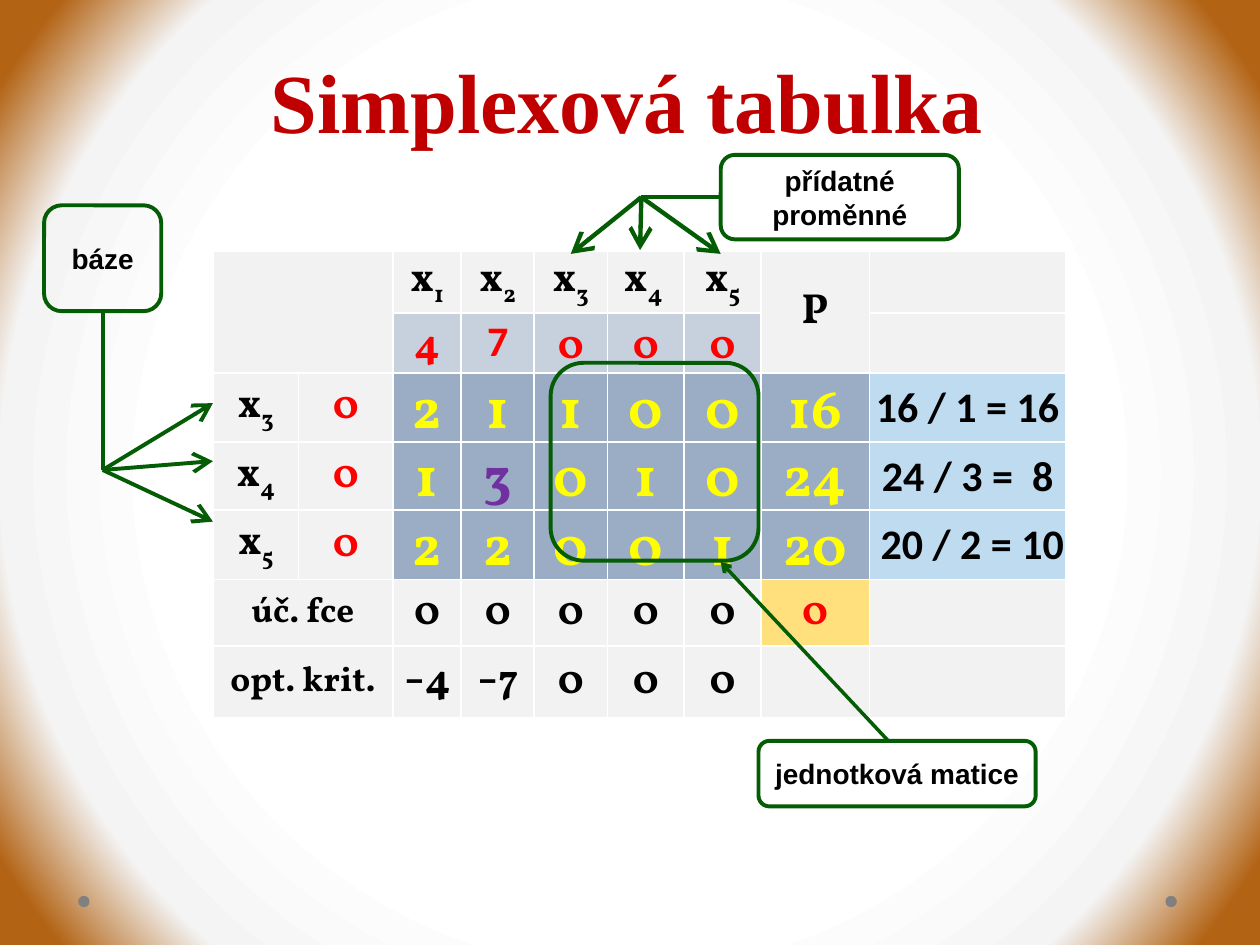
from itertools import groupby

from lxml import etree
from pptx import Presentation
from pptx.dml.color import RGBColor
from pptx.enum.shapes import MSO_CONNECTOR as CONN, MSO_SHAPE as SHAPE
from pptx.enum.text import MSO_ANCHOR as ANCHOR, PP_ALIGN as ALIGN
from pptx.oxml import parse_xml
from pptx.oxml.ns import nsdecls, qn
from pptx.util import Inches, Pt

BLACK = RGBColor(0x00, 0x00, 0x00)
RED = RGBColor(0xFF, 0x00, 0x00)
DARK_RED = RGBColor(0xC0, 0x00, 0x00)
YELLOW = RGBColor(0xFF, 0xFF, 0x00)
PURPLE = RGBColor(0x70, 0x30, 0xA0)
GREEN = RGBColor(0x04, 0x5C, 0x04)
GRAY = RGBColor(0x80, 0x80, 0x80)
PALE = RGBColor(0xF2, 0xF2, 0xF2)
PRICE = RGBColor(0xC7, 0xD1, 0xDE)
MATRIX = RGBColor(0x9B, 0xAD, 0xC4)
RATIO = RGBColor(0x00, 0x70, 0xC0)
GOLD = RGBColor(0xFF, 0xE0, 0x7D)

COLS = [0.68, 0.75, 0.54, 0.58, 0.58, 0.61, 0.61, 0.86, 1.56]
ROWS = [0.47, 0.41, 0.55, 0.54, 0.55, 0.53, 0.57]
CELLS = [
    ["", "", "x_1", "x_2", "x_3", "x_4 ", "x_5", "P", ""],
    ["", "", "4", "7", "0", "0", "0", "", ""],
    ["x_3", "0", "2", "1", "1", "0", "0", "16", "16 / 1 = 16"],
    ["x_4", "0", "1", "3", "0", "1", "0", "24", "24 / 3 =  8"],
    ["x_5", "0", "2", "2", "0", "0", "1", "20", " 20 / 2 = 10"],
    ["úč. fce", "", "0", "0", "0", "0", "0", "0", ""],
    ["opt. krit.", "", "‒4", "‒7", "0", "0", "0", "", ""],
]
MERGES = [((0, 0), (1, 1)), ((0, 7), (1, 7)), ((5, 0), (5, 1)), ((6, 0), (6, 1))]


def write(tf, text, size=24, color=BLACK, font="Vollkorn", spacing=None):
    """Write one bold centred line; the part after an underscore is a subscript."""
    tf.word_wrap = True
    p = tf.paragraphs[0]
    p.alignment = ALIGN.CENTER
    p.line_spacing = spacing
    for level, part in enumerate(text.split("_")):
        for is_dash, chars in groupby(part, lambda c: c == "‒"):
            r = p.add_run()
            r.text = "".join(chars)
            r.font.size, r.font.bold = Pt(size), True
            r.font.name = "Calibri" if is_dash else font
            r.font.color.rgb = color
            if level:
                r.font._element.set("baseline", "-25000")


def set_background(slide):
    """Fill the background with a white disc fading to brown corners."""
    stops = "".join(
        f'<a:gs pos="{pos}000"><a:srgbClr val="{color}"/></a:gs>'
        for pos, color in [(59, "FFFFFF"), (80, "F4F4F4"), (94, "B26314")])
    fill = slide.background.fill
    fill.gradient()
    old = slide._element.find(".//" + qn("a:gradFill"))
    old.getparent().replace(old, parse_xml(
        f'<a:gradFill {nsdecls("a")} rotWithShape="1"><a:gsLst>{stops}</a:gsLst>'
        '<a:path path="circle"><a:fillToRect l="50000" t="50000" r="50000" b="50000"/>'
        '</a:path></a:gradFill>'))


def add_shape(shapes, kind, box, fill=None, line=None):
    """Add a preset shape without shadow."""
    sp = shapes.add_shape(kind, *map(Inches, box))
    sp.shadow.inherit = False
    if fill:
        sp.fill.solid()
        sp.fill.fore_color.rgb = fill
    else:
        sp.fill.background()
    if line:
        sp.line.color.rgb, sp.line.width = line, Pt(2.25)
    else:
        sp.line.fill.background()
    return sp


def add_callout(shapes, text, box):
    """Add a green rounded outline with a label."""
    sp = add_shape(shapes, SHAPE.ROUNDED_RECTANGLE, box, line=GREEN)
    tf = sp.text_frame
    tf.vertical_anchor = ANCHOR.MIDDLE
    tf.margin_left = tf.margin_right = Inches(0.05)
    write(tf, text, size=16, font="Arial")
    return sp


def add_line(shapes, start, end, width=2.25, head="lg"):
    """Add a straight green connector, with an open arrowhead of the given size."""
    cx = shapes.add_connector(CONN.STRAIGHT, *map(Inches, (*start, *end)))
    cx.line.color.rgb, cx.line.width = GREEN, Pt(width)
    if head:
        etree.SubElement(cx.line._get_or_add_ln(), qn("a:tailEnd"),
                         type="arrow", w=head, len=head)
    etree.SubElement(cx._element.spPr, qn("a:effectLst"))
    return cx


def add_title(slide, box):
    """Place and format the title placeholder."""
    title = slide.shapes.title
    title.left, title.top, title.width, title.height = map(Inches, box)
    title.text_frame.vertical_anchor = ANCHOR.MIDDLE
    write(title.text_frame, "Simplexová tabulka", 48, DARK_RED, "Times New Roman")


def cell_style(row, col):
    """Return the fill and the text format of a table cell."""
    if row == 1 and 2 <= col <= 6:
        font = "Calibri" if col == 3 else "Vollkorn"
        return PRICE, dict(color=RED, font=font, spacing=0.85)
    if 2 <= row <= 4 and col == 8:
        return RATIO, dict(font="Calibri")
    if 2 <= row <= 4 and col >= 2:
        color = PURPLE if (row, col) == (3, 3) else YELLOW
        return MATRIX, dict(size=32, color=color, spacing=0.85)
    if (row, col) == (5, 7):
        return GOLD, dict(color=RED)
    if row >= 5 and col == 0:
        return PALE, dict(size=20)
    return PALE, dict(color=RED if col == 1 else BLACK)


def format_cell(cell, fill):
    """Set margins, white borders and fill of a cell."""
    cell.vertical_anchor = ANCHOR.MIDDLE
    cell.margin_left = cell.margin_right = cell.margin_top = Inches(0.01)
    cell.margin_bottom = 0
    for side in "LRTB":
        cell._tc.get_or_add_tcPr().append(parse_xml(
            f'<a:ln{side} {nsdecls("a")} w="12700"><a:solidFill>'
            f'<a:srgbClr val="FFFFFF"/></a:solidFill></a:ln{side}>'))
    cell.fill.solid()
    cell.fill.fore_color.rgb = fill
    if fill == RATIO:
        color = cell._tc.tcPr.find(qn("a:solidFill"))[0]
        etree.SubElement(color, qn("a:alpha"), val="25000")


def add_simplex_table(slide, box):
    """Add the simplex table."""
    table = slide.shapes.add_table(len(ROWS), len(COLS), *map(Inches, box)).table
    table.first_row = table.horz_banding = False
    for col, width in zip(table.columns, COLS):
        col.width = Inches(width)
    for row, height in zip(table.rows, ROWS):
        row.height = Inches(height)
    for i, texts in enumerate(CELLS):
        for j, text in enumerate(texts):
            fill, fmt = cell_style(i, j)
            format_cell(table.cell(i, j), fill)
            if text:
                write(table.cell(i, j).text_frame, text, **fmt)
    for first, last in MERGES:
        table.cell(*first).merge(table.cell(*last))


def add_slack_note(slide, box):
    """Add the slack variable label with arrows to its three columns."""
    x, y, _, h = box
    shapes = slide.shapes.add_group_shape().shapes
    sp = add_callout(shapes, "přídatné proměnné", box)
    hub = (x - 0.63, y + h / 2)
    add_line(shapes, hub, (x, hub[1]), 2.5, head=None).end_connect(sp, 1)
    for dx, dy in [(-0.56, 0.45), (-0.01, 0.42), (0.63, 0.45)]:
        add_line(shapes, hub, (hub[0] + dx, hub[1] + dy), 2.5)


def add_basis_note(slide, box):
    """Add the basis label with arrows to its three rows."""
    x, y, w, h = box
    shapes = slide.shapes.add_group_shape().shapes
    sp = add_callout(shapes, "báze", box)
    hub = (x + w / 2, y + h + 1.26)
    add_line(shapes, (hub[0], y + h), hub, head=None).begin_connect(sp, 2)
    for dy in (-0.53, -0.07, 0.41):
        add_line(shapes, hub, (x + 1.34, hub[1] + dy))


def add_unit_matrix_note(slide, box, matrix_box):
    """Outline the unit matrix and point to it from its label."""
    x, y, w, h = matrix_box
    add_callout(slide.shapes, "jednotková matice", box)
    add_shape(slide.shapes, SHAPE.ROUNDED_RECTANGLE, matrix_box, line=GREEN)
    add_line(slide.shapes, (box[0] + 1.03, box[1]), (x + w - 0.3, y + h + 0.01), 2, "med")


def main():
    """Build the slide and save it."""
    prs = Presentation()
    prs.slide_width, prs.slide_height = Inches(10), Inches(7.5)
    slide = prs.slides.add_slide(prs.slide_layouts[5])
    set_background(slide)
    for x in (9.25, 0.62):
        add_shape(slide.shapes, SHAPE.OVAL, (x, 7.11, 0.09, 0.09), fill=GRAY)
    add_title(slide, (0.96, 0.34, 8.03, 0.91))
    add_simplex_table(slide, (1.69, 1.99, 6.77, 3.62))
    add_slack_note(slide, (5.72, 1.23, 1.89, 0.67))
    add_basis_note(slide, (0.35, 1.63, 0.93, 0.84))
    add_unit_matrix_note(slide, (6.02, 5.88, 2.2, 0.52), (4.37, 2.88, 1.65, 1.57))
    prs.save("out.pptx")


if __name__ == "__main__":
    main()
